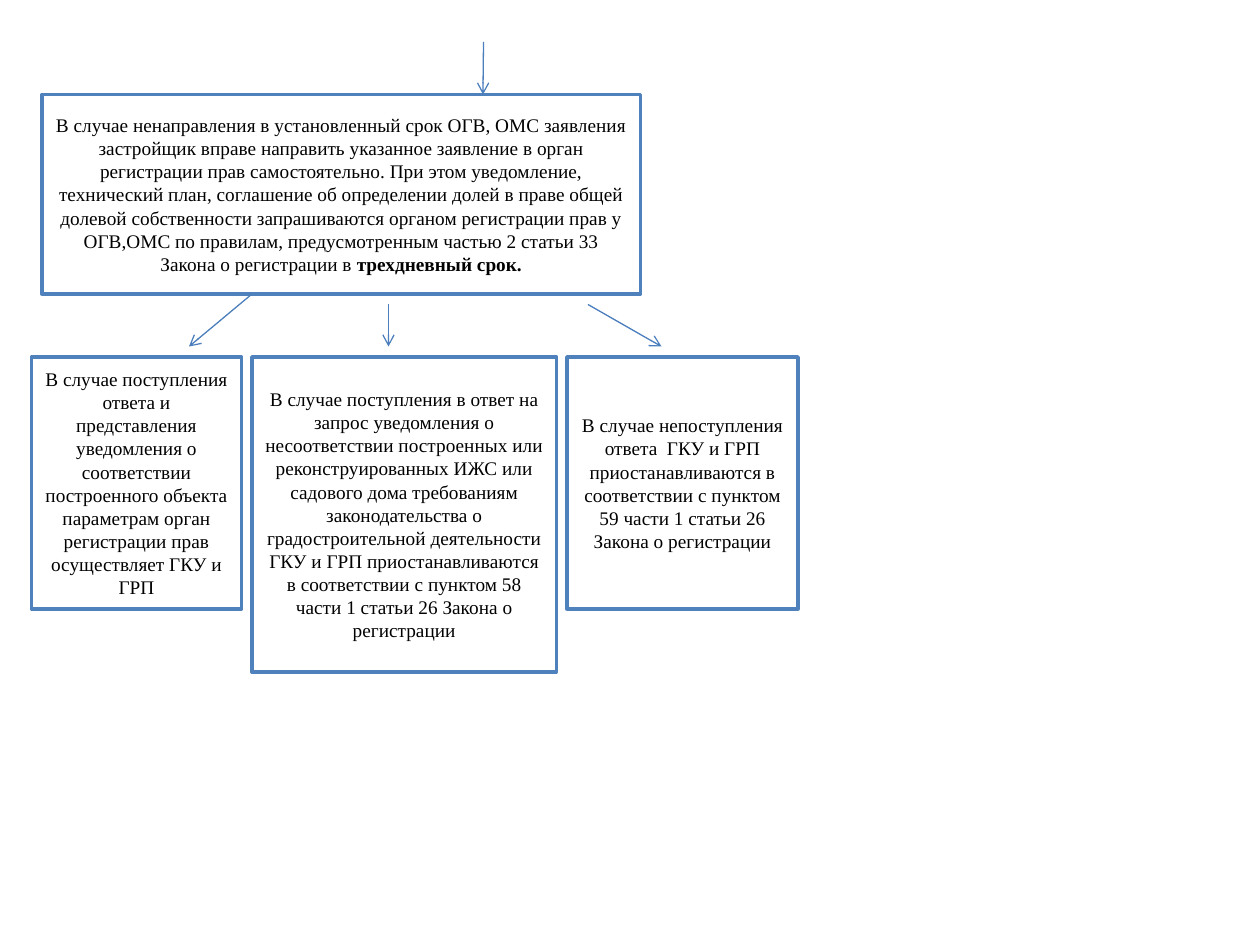
from typing import NamedTuple

from lxml import etree
from pptx import Presentation
from pptx.dml.color import RGBColor
from pptx.enum.shapes import MSO_CONNECTOR, MSO_SHAPE
from pptx.enum.text import MSO_ANCHOR, PP_ALIGN
from pptx.oxml.ns import qn
from pptx.util import Pt

RECT = MSO_SHAPE.RECTANGLE
LINE = MSO_CONNECTOR.STRAIGHT
CENTER = PP_ALIGN.CENTER
MIDDLE = MSO_ANCHOR.MIDDLE
BLANK = 6


class Box(NamedTuple):
    left: float
    top: float
    width: float
    height: float
    text: str
    bold: str = ""


class Arrow(NamedTuple):
    x1: float
    y1: float
    x2: float
    y2: float


def color(code: str) -> RGBColor:
    return RGBColor.from_string(code)


FONT = {"name": "Times New Roman", "size": Pt(11)}
FRAME = {"word_wrap": True, "vertical_anchor": MIDDLE}


def style(part, values: dict) -> None:
    for key, value in values.items():
        setattr(part, key, value)


def draw_box(slide, box: Box) -> None:
    shape = slide.shapes.add_shape(RECT, *map(Pt, box[:4]))
    shape.shadow.inherit = False
    shape.fill.solid()
    shape.fill.fore_color.rgb = color("FFFFFF")
    shape.line.color.rgb = color("4F81BD")
    shape.line.width = Pt(2)
    style(shape.text_frame, FRAME)
    para = shape.text_frame.paragraphs[0]
    para.alignment = CENTER
    for text, bold in ((box.text, False), (box.bold, True)):
        if text:
            run = para.add_run()
            run.text = text
            style(run.font, {**FONT, "bold": bold})
            run.font.color.rgb = color("000000")


def draw_arrow(slide, arrow: Arrow) -> None:
    link = slide.shapes.add_connector(LINE, *map(Pt, arrow))
    link.line.color.rgb = color("4B7EBC")
    link.line.width = Pt(0.75)
    # Open arrowhead, no shadow
    etree.SubElement(link.line._get_or_add_ln(), qn("a:tailEnd"), type="arrow")
    etree.SubElement(link._element.spPr, qn("a:effectLst"))


# Starting case
START = Box(
    24, 54, 342, 114,
    "В случае ненаправления в установленный срок ОГВ, ОМС заявления "
    "застройщик вправе направить указанное заявление в орган регистрации "
    "прав самостоятельно. При этом уведомление, технический план, "
    "соглашение об определении долей в праве общей долевой собственности "
    "запрашиваются органом регистрации прав у ОГВ,ОМС по правилам, "
    "предусмотренным частью 2 статьи 33 Закона о регистрации в ",
    "трехдневный срок.",
)

# Outcomes from left to right: width, height, text
CASES = (
    (120, 144,
     "В случае поступления ответа и представления уведомления о "
     "соответствии построенного объекта параметрам орган регистрации прав "
     "осуществляет ГКУ и ГРП"),
    (174, 180,
     "В случае поступления в ответ на запрос уведомления о несоответствии "
     "построенных или реконструированных ИЖС или садового дома требованиям "
     "законодательства о градостроительной деятельности ГКУ и ГРП "
     "приостанавливаются в соответствии с пунктом 58 части 1 статьи 26 "
     "Закона о регистрации"),
    (132, 144,
     "В случае непоступления ответа  ГКУ и ГРП приостанавливаются в "
     "соответствии с пунктом 59 части 1 статьи 26 Закона о регистрации"),
)
LEFT, TOP, GAP = 18, 204, 6

ARROWS = (
    Arrow(276.3, 24, 276, 54),
    Arrow(144, 168, 108, 198),
    Arrow(222, 174, 222, 198),
    Arrow(336, 174, 378, 198),
)


def main() -> None:
    deck = Presentation()
    style(deck, {"slide_width": Pt(720), "slide_height": Pt(540)})
    slide = deck.slides.add_slide(deck.slide_layouts[BLANK])

    draw_box(slide, START)

    # Row of outcomes with equal gaps
    left = LEFT
    for width, height, text in CASES:
        draw_box(slide, Box(left, TOP, width, height, text))
        left += width + GAP

    for arrow in ARROWS:
        draw_arrow(slide, arrow)

    deck.save("out.pptx")


if __name__ == "__main__":
    main()
